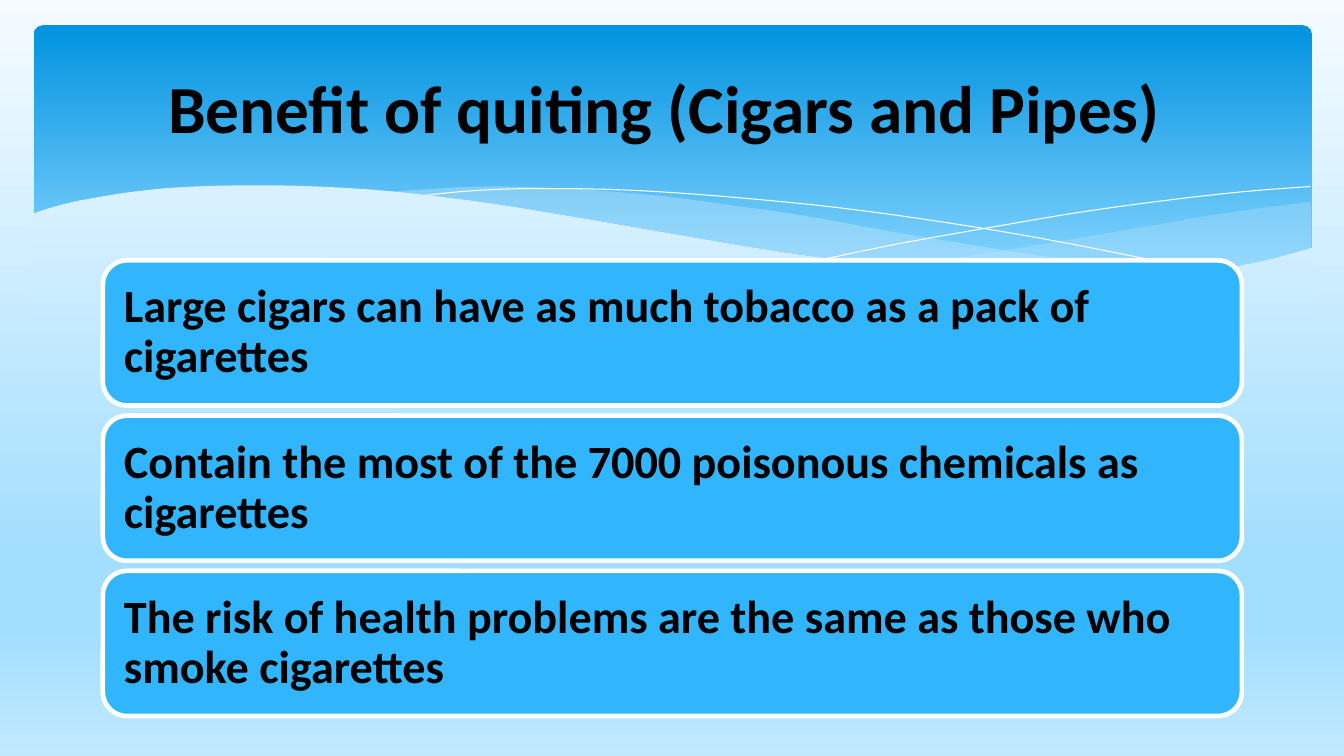
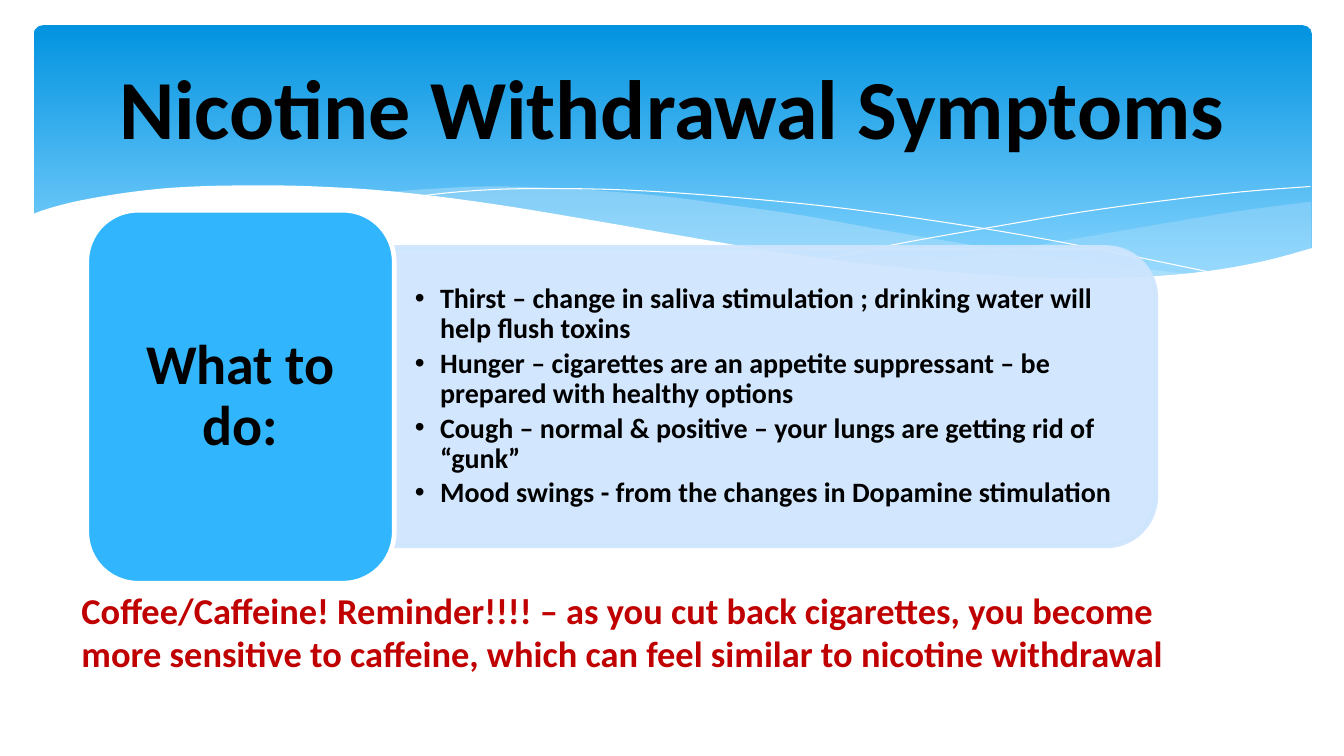
from dataclasses import dataclass, field
from typing import Any

from lxml.etree import SubElement
from pptx import Presentation
from pptx.dml.color import RGBColor
from pptx.enum.shapes import MSO_SHAPE
from pptx.enum.text import MSO_ANCHOR, PP_ALIGN
from pptx.oxml.ns import qn
from pptx.util import Pt

HUES = {
    "white": "FFFFFF", "ink": "000000", "red": "C00000",
    "card": "31B6FD", "pane": "CEE5FE", "tint": "C6E7FC",
}
Stops = list[tuple[int, str]]
Curve = list[tuple[float, float]]
SKY: Stops = [(0, "F5FBFF"), (74, "A2DEFE"), (83, "A2DEFE"), (100, "C1E9FE")]
HAZE: Stops = [(0, "D9F1FF"), (100, "C4EAFE")]  # the part of SKY behind the wave
BAND: Stops = [(0, "0293E0"), (90, "83D3FE")]
FONT = "Calibri"
EDGE = 3.35


@dataclass
class Box:
    left: float
    top: float
    width: float
    height: float

    def pts(self) -> tuple[Pt, Pt, Pt, Pt]:
        return Pt(self.left), Pt(self.top), Pt(self.width), Pt(self.height)


@dataclass
class Style:
    size: float
    hue: str = "ink"
    pad: tuple[float, float] = (7.2, 3.6)
    bullet: bool = False
    frame: dict[str, Any] = field(default_factory=dict)
    para: dict[str, Any] = field(default_factory=dict)


@dataclass
class Wave:
    """A band outline; edges are smoothed one by one, then joined."""
    edges: list[Curve]
    alpha: int = 100
    closed: bool = True


MID = {"vertical_anchor": MSO_ANCHOR.MIDDLE}
MAIN = {"alignment": PP_ALIGN.CENTER}
TIGHT = {"alignment": PP_ALIGN.LEFT, "line_spacing": 0.9}
CARD = Style(33, pad=(10, 10), frame=MID, para=TIGHT)
CUE = Style(40, pad=(12, 6), frame=MID, para=TIGHT | MAIN)
LIST = Style(20, pad=(19.2, 9.6), bullet=True, frame=MID,
             para=TIGHT | {"space_after": Pt(3)})
NOTE = Style(26, hue="red")

WAVES = [
    Wave([[(936.5, 144), (883.5, 151), (825.8, 160.6), (747, 174),
           (656, 188.5), (635, 190.8)],
          [(635, 190.8), (677, 195.1), (738, 199.1), (791, 199.8),
           (845, 196.8), (891, 189.6), (936.5, 177.8)]], alpha=29),
    Wave([[(856.8, 196.6), (774.7, 187.2), (712, 177.8), (641.5, 166.3),
           (574.6, 154.1), (519, 146.2), (469.4, 139.7), (403, 134.6),
           (347, 133.2), (301, 135.4), (275, 137.5)],
          [(275, 137.5), (328, 143.3), (388, 151.9), (431, 159.8),
           (508, 172.8), (577, 183.6), (638.6, 191.5), (693.4, 197.3),
           (752, 200), (805, 200), (856.8, 196.6)]], alpha=40),
    Wave([[(296.6, 140.4), (330, 136.8), (371.5, 134.8), (432, 135.2),
           (489.6, 138.2), (558, 144), (610.6, 149.8), (667.4, 157.7),
           (730, 167.8), (798, 180.7), (871.2, 195.8)]], closed=False),
    Wave([[(589, 185), (645, 173.5), (718, 160.6), (774, 151.2),
           (831.6, 143.3), (887, 137), (936, 133.2)]], closed=False),
]
MASK = Wave([[(938, 177), (903, 186.5), (862.6, 193.7), (816.5, 197.8),
              (762, 198.9), (697.7, 195.8), (621.4, 188.6), (555.8, 180),
              (483, 167.8), (429, 158.4), (350, 145.4), (280.8, 136.8),
              (220.3, 133), (169, 132.5), (126.7, 133.9), (91.4, 137.5),
              (57, 143.3), (34.6, 149), (22.3, 153.4)],
             [(22.3, 237), (938, 237)]])


def rgb(name: str) -> RGBColor:
    return RGBColor.from_string(HUES[name])


def put(item: Any, vals: dict[str, Any]) -> None:
    for key, val in vals.items():
        setattr(item, key, val)


def grade(fill: Any, root: Any, stops: Stops) -> None:
    """Give a fill, held under root, a gradient from top to bottom."""
    fill.gradient()
    fill.gradient_angle = 270
    rows = next(root.iter(qn("a:gsLst")))
    for old in list(rows):
        rows.remove(old)
    for pos, hue in stops:
        stop = SubElement(rows, qn("a:gs"), pos=str(pos * 1000))
        SubElement(stop, qn("a:srgbClr"), val=hue)


def fade(shape: Any, alpha: int) -> None:
    """Set the opacity, in percent, of all fill and line colours."""
    for hue in shape.element.spPr.iter(qn("a:srgbClr")):
        SubElement(hue, qn("a:alpha"), val=str(alpha * 1000))


def coat(shape: Any, fill: str = "", line: str = "", width: float = EDGE) -> None:
    shape.shadow.inherit = False
    if fill:
        shape.fill.solid()
        shape.fill.fore_color.rgb = rgb(fill)
    else:
        shape.fill.background()
    if line:
        shape.line.color.rgb = rgb(line)
        shape.line.width = Pt(width)
    else:
        shape.line.fill.background()


def smooth(knots: Curve, steps: int = 4) -> Curve:
    """Run a Catmull-Rom curve through the knots."""
    if len(knots) < 3:
        return knots
    ends = [knots[0], *knots, knots[-1]]
    out = [knots[0]]
    for a, b, c, d in zip(ends, ends[1:], ends[2:], ends[3:]):
        for n in range(1, steps + 1):
            t = n / steps
            x, y = (
                (2 * q + (r - p) * t + (2 * p - 5 * q + 4 * r - s) * t ** 2
                 + (3 * q - p - 3 * r + s) * t ** 3) / 2
                for p, q, r, s in zip(a, b, c, d))
            out.append((x, y))
    return out


def trace(slide: Any, wave: Wave) -> Any:
    dots = [(Pt(x), Pt(y)) for edge in wave.edges for x, y in smooth(edge)]
    pen = slide.shapes.build_freeform(*dots[0], scale=1.0)
    pen.add_line_segments(dots[1:], close=wave.closed)
    return pen.convert_to_shape()


def write(shape: Any, lines: list[str], style: Style) -> None:
    frame = shape.text_frame
    wide, high = map(Pt, style.pad)
    put(frame, {"word_wrap": True, "margin_left": wide, "margin_right": wide,
                "margin_top": high, "margin_bottom": high} | style.frame)
    for n, line in enumerate(lines):
        para = frame.add_paragraph() if n else frame.paragraphs[0]
        put(para, style.para)
        run = para.add_run()
        run.text = line
        put(run.font, {"name": FONT, "size": Pt(style.size), "bold": True})
        run.font.color.rgb = rgb(style.hue)
        if style.bullet:
            props = para._p.get_or_add_pPr()
            props.set("marL", str(Pt(18)))
            props.set("indent", str(-Pt(18)))
            SubElement(props, qn("a:buFont"), typeface="Arial")
            SubElement(props, qn("a:buChar"), char="•")


def label(slide: Any, box: Box, lines: list[str], style: Style) -> None:
    write(slide.shapes.add_textbox(*box.pts()), lines, style)


def card(slide: Any, box: Box, text: str, style: Style) -> None:
    shape = slide.shapes.add_shape(MSO_SHAPE.ROUNDED_RECTANGLE, *box.pts())
    coat(shape, "card", "white")
    write(shape, [text], style)


def start(deck: Any, sky: bool) -> Any:
    """Add a slide with its background and the wavy title band."""
    slide = deck.slides.add_slide(deck.slide_layouts[6])
    back = slide.background.fill
    if sky:
        grade(back, slide.element, SKY)
    else:
        back.solid()
        back.fore_color.rgb = rgb("white")
    band = slide.shapes.add_shape(
        MSO_SHAPE.ROUNDED_RECTANGLE, *Box(24, 18, 913, 194.4).pts())
    band.adjustments[0] = 0.034
    coat(band)
    grade(band.fill, band.element, BAND)
    for wave in WAVES:
        shape = trace(slide, wave)
        if wave.closed:
            coat(shape, "tint")
            fade(shape, wave.alpha)
        else:
            coat(shape, line="white", width=0)
    mask = trace(slide, MASK)
    coat(mask, "white")
    if sky:
        grade(mask.fill, mask.element, HAZE)
    return slide


def title(slide: Any, text: str, size: float) -> None:
    label(slide, Box(48, 26.6, 864, 98.6), [text],
          Style(size, frame=MID, para=MAIN))


def quit_gains(deck: Any) -> None:
    slide = start(deck, sky=True)
    title(slide, "Benefit of quiting (Cigars and Pipes) ", 48)
    facts = [
        "Large cigars can have as much tobacco as a pack of cigarettes",
        "Contain the most of the 7000 poisonous chemicals as cigarettes",
        "The risk of health problems are the same as those who smoke cigarettes",
    ]
    for n, fact in enumerate(facts):
        card(slide, Box(73.5, 186 + n * 110.9, 813.6, 103.7), fact, CARD)


def symptoms(deck: Any) -> None:
    slide = start(deck, sky=False)
    pane = slide.shapes.add_shape(
        MSO_SHAPE.ROUND_2_SAME_RECTANGLE, *Box(445, 9.4, 213.1, 548).pts())
    pane.rotation = 90
    coat(pane, "pane", "pane")
    fade(pane, 90)
    label(slide, Box(277.2, 187.2, 537.1, 192.2), [
        "Thirst – change in saliva stimulation ; drinking water will help flush toxins",
        "Hunger – cigarettes are an appetite suppressant – be prepared with healthy options",
        "Cough – normal & positive – your lungs are getting rid of “gunk”",
        "Mood swings - from the changes in Dopamine stimulation",
    ], LIST)
    card(slide, Box(62, 150.2, 219.6, 266.4), "What to do:", CUE)
    title(slide, "Nicotine Withdrawal Symptoms", 60)
    label(slide, Box(51.1, 416.2, 823.7, 70.6), [
        "Coffee/Caffeine! Reminder!!!! – as you cut back cigarettes, you become "
        "more sensitive to caffeine, which can feel similar to nicotine withdrawal",
    ], NOTE)


def main() -> None:
    deck = Presentation()
    put(deck, {"slide_width": Pt(960), "slide_height": Pt(540)})
    quit_gains(deck)
    symptoms(deck)
    deck.save("out.pptx")


if __name__ == "__main__":
    main()
